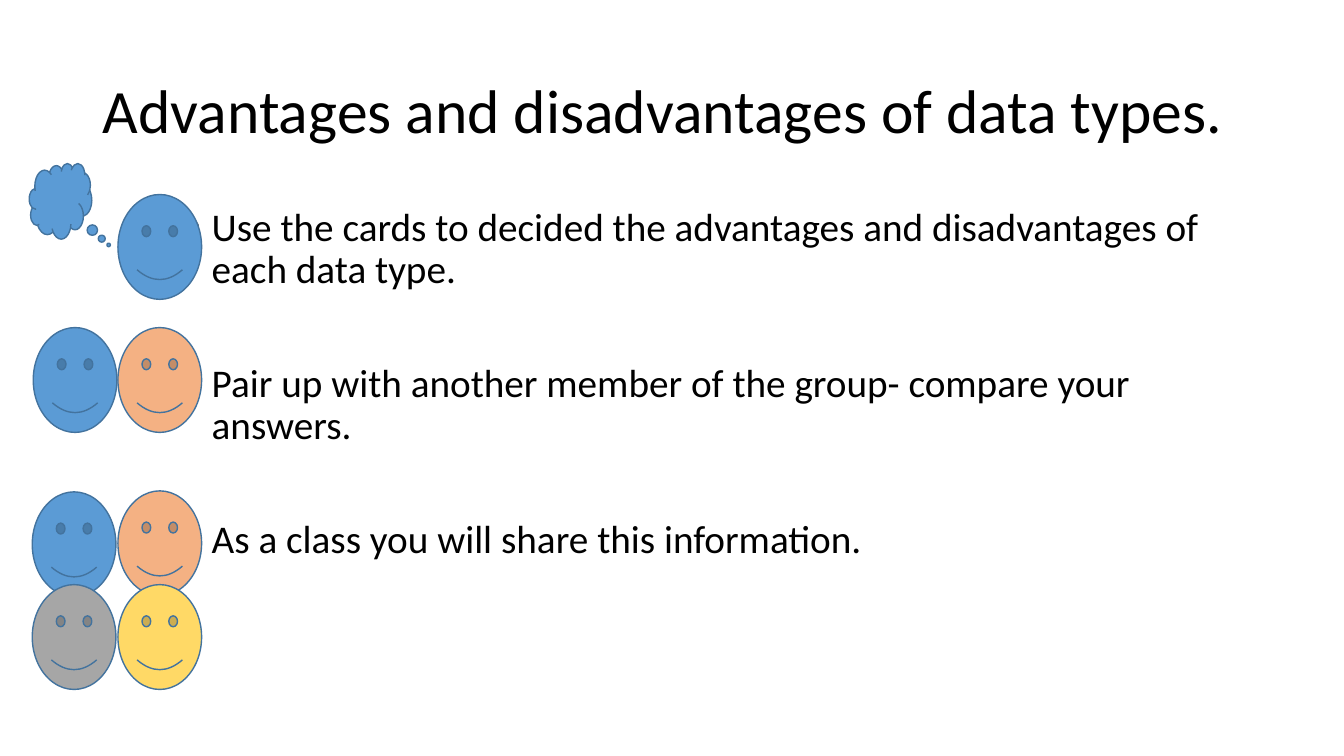
from dataclasses import dataclass

from pptx import Presentation
from pptx import util as u
from pptx.dml.color import RGBColor
from pptx.enum import shapes, text

COLOURS = {
    "text": "000000",
    "outline": "43739E",
    "blue": "5B9BD5",
    "orange": "F4B183",
    "yellow": "FFD966",
    "grey": "A6A6A6",
}
FACE_SIZE = (0.83, 1.04)


@dataclass
class Face:
    left: float
    top: float
    colour: str


# One face thinks, two pair up, four share
FACES = [
    Face(1.17, 1.93, "blue"),
    Face(0.33, 3.25, "blue"),
    Face(1.17, 3.25, "orange"),
    Face(0.32, 4.88, "blue"),
    Face(1.17, 4.87, "orange"),
    Face(1.17, 5.8, "yellow"),
    Face(0.32, 5.8, "grey"),
]
STEPS = [
    "Use the cards to decided the advantages and disadvantages of each data type.",
    "Pair up with another member of the group- compare your answers.",
    "As a class you will share this information.",
]


def place(shape, left: float, top: float, width: float, height: float) -> None:
    shape.left, shape.top = u.Inches(left), u.Inches(top)
    shape.width, shape.height = u.Inches(width), u.Inches(height)


def write(paragraph, wording: str, *, size: float, before: float = 0,
          hanging: float = 0) -> None:
    paragraph.alignment = text.PP_ALIGN.LEFT
    paragraph.line_spacing = 0.9
    paragraph.space_before = u.Pt(before)
    if hanging:
        properties = paragraph._p.get_or_add_pPr()
        properties.set("marL", str(u.Inches(hanging)))
        properties.set("indent", str(-u.Inches(hanging)))
    run = paragraph.add_run()
    run.text = wording
    run.font.name = "Calibri"
    run.font.size = u.Pt(size)
    run.font.color.rgb = RGBColor.from_string(COLOURS["text"])


def draw(slide, kind: shapes.MSO_SHAPE, left: float, top: float,
         width: float, height: float, colour: str):
    shape = slide.shapes.add_shape(kind, u.Inches(left), u.Inches(top),
                                   u.Inches(width), u.Inches(height))
    shape.shadow.inherit = False
    shape.fill.solid()
    shape.fill.fore_color.rgb = RGBColor.from_string(COLOURS[colour])
    shape.line.color.rgb = RGBColor.from_string(COLOURS["outline"])
    shape.line.width = u.Pt(1)
    return shape


def main() -> None:
    deck = Presentation()
    deck.slide_width, deck.slide_height = u.Inches(13.33), u.Inches(7.5)
    slide = deck.slides.add_slide(deck.slide_layouts[1])

    # Heading
    heading = slide.shapes.title
    place(heading, 0.92, 0.4, 11.5, 1.45)
    heading.text_frame.vertical_anchor = text.MSO_ANCHOR.MIDDLE
    heading.text_frame.auto_size = text.MSO_AUTO_SIZE.NONE
    write(heading.text_frame.paragraphs[0], heading_text, size=44)

    # Steps of the activity
    steps = slide.placeholders[1]
    place(steps, 1.75, 2.01, 10.79, 4.76)
    frame = steps.text_frame
    frame.auto_size = text.MSO_AUTO_SIZE.NONE
    for number, step in enumerate(STEPS):
        paragraph = frame.add_paragraph() if number else frame.paragraphs[0]
        write(paragraph, step, size=28, before=50.8 if number else 10,
              hanging=0.25)

    # Faces and the thought of the first one
    for face in FACES:
        draw(slide, shapes.MSO_SHAPE.SMILEY_FACE, face.left, face.top,
             *FACE_SIZE, face.colour)
    thought = draw(slide, shapes.MSO_SHAPE.CLOUD_CALLOUT,
                   0.29, 1.62, 0.62, 0.75, "blue")
    thought.adjustments[0], thought.adjustments[1] = 0.77, 0.58

    deck.save("out.pptx")


heading_text = "Advantages and disadvantages of data types."

if __name__ == "__main__":
    main()
